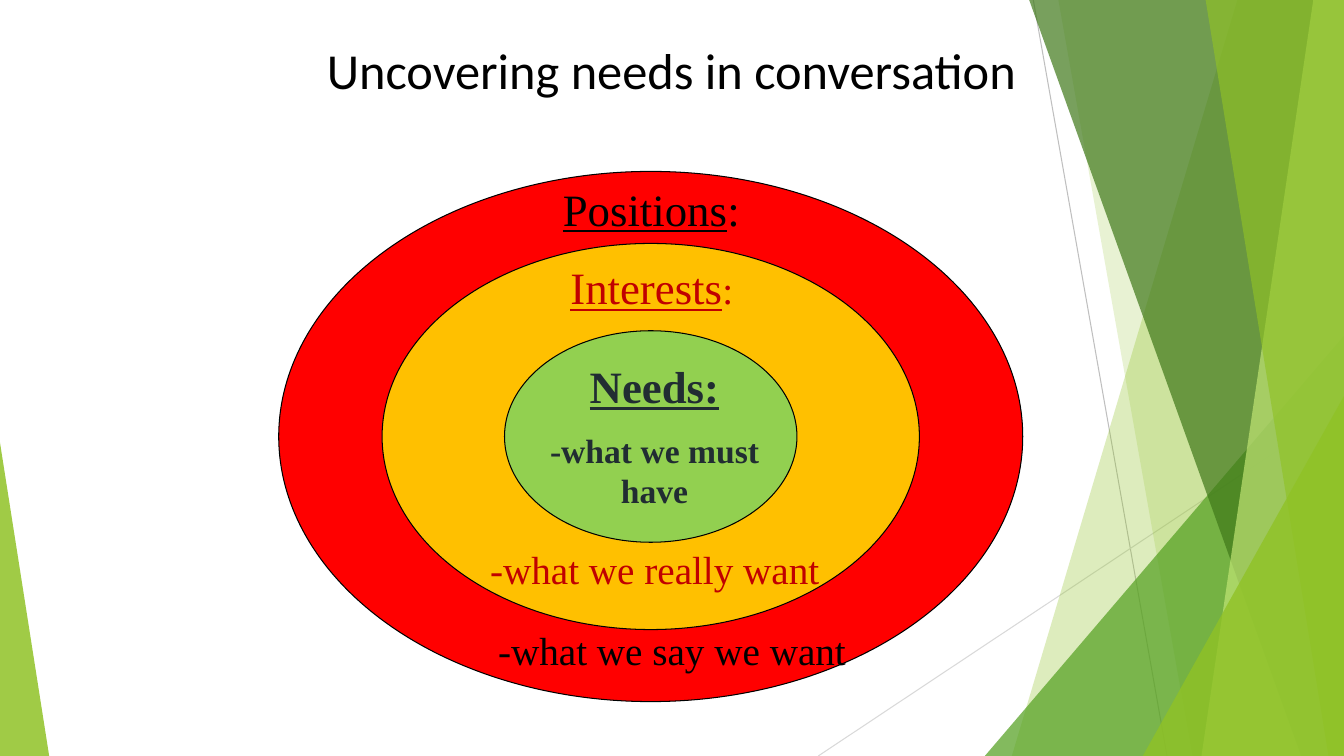
"""Build the slide on uncovering needs in conversation."""
from dataclasses import dataclass

from lxml import etree
from pptx import Presentation
from pptx import util as u
from pptx.dml.color import RGBColor
from pptx.enum import shapes, text
from pptx.oxml.ns import qn

COLORS = {
    "leaf": "90C226", "grass": "54A021", "forest": "3F7819", "lime": "C0E474",
    "gray": "BFBFBF", "silver": "D9D9D9", "black": "000000", "red": "FF0000",
    "amber": "FFC000", "green": "92D050", "crimson": "C00000", "slate": "212D32",
}
WIDTH, HEIGHT = 33.87, 19.05
TOP = -0.02
CENTER_X, CENTER_Y = 16.4, 11.0
SERIF = "Times New Roman"


@dataclass
class Ray:
    start: tuple[float, float]
    end: tuple[float, float]
    color: str


@dataclass
class Band:
    top_x: float
    bottom_x: float
    color: str
    alpha: int


@dataclass
class Wedge:
    left: float
    top: float
    width: float
    apex: float
    color: str
    alpha: int


@dataclass
class Ring:
    width: float
    height: float
    color: str


@dataclass
class Run:
    text: str
    size: int
    underline: bool = False


@dataclass
class Label:
    box: tuple[float, float, float, float]
    color: str
    paragraphs: list[list[Run]]
    font: str = SERIF
    bold: bool = False
    spacing: float = 1.0


RAYS = [
    Ray((26.04, 0), (29.41, HEIGHT), "gray"),
    Ray((WIDTH, 10.24), (20.62, HEIGHT), "silver"),
]
FACETS = [
    Band(31.19, 25.5, "leaf", 30),
    Band(26.67, 30.05, "leaf", 20),
    Wedge(24.82, 8.46, 9.05, 1, "grass", 72),
    Band(25.93, 32.79, "forest", 70),
    Band(33.1, 30.28, "lime", 70),
    Band(30.38, 33.48, "leaf", 65),
    Wedge(28.8, 9.98, 5.07, 1, "leaf", 80),
    Wedge(0, 11.15, 1.24, 0, "leaf", 85),
]
RINGS = [
    Ring(18.75, 13.36, "red"),
    Ring(13.54, 9.73, "amber"),
    Ring(7.37, 5.33, "green"),
]
LABELS = [
    Label((4.62, 1.04, 24.61, 1.98), "black",
          [[Run("Uncovering needs in conversation", 36)]], font="Calibri", spacing=0.9),
    Label((13.39, 4.45, 6.05, 1.63), "black", [[Run("Positions", 32, True), Run(":", 32)]]),
    Label((13.39, 6.43, 6.07, 1.63), "crimson", [[Run("Interests", 32, True), Run(":", 28)]]),
    Label((12.8, 8.92, 7.39, 4.19), "slate",
          [[Run("Needs:", 32, True)], [Run("-what we must have", 24)]], bold=True),
    Label((12.04, 13.61, 8.92, 1.45), "crimson", [[Run("-what we really want", 28)]]),
    Label((11.46, 15.65, 10.95, 1.45), "black", [[Run("-what we say we want", 28)]]),
]


def rgb(name: str) -> RGBColor:
    """Return the named colour."""
    return RGBColor.from_string(COLORS[name])


def fill(sp, color: str, alpha: int = 100) -> None:
    """Fill a shape, with an opacity in percent, and drop its shadow."""
    sp.shadow.inherit = False
    sp.fill.solid()
    sp.fill.fore_color.rgb = rgb(color)
    if alpha < 100:
        clr = sp._element.spPr.find(qn("a:solidFill"))[0]
        etree.SubElement(clr, qn("a:alpha"), val=str(alpha * 1000))


def draw_ray(s, ray: Ray) -> None:
    """Draw a thin background line."""
    points = [u.Cm(v) for v in (*ray.start, *ray.end)]
    sp = s.shapes.add_connector(shapes.MSO_CONNECTOR.STRAIGHT, *points)
    sp.line.color.rgb = rgb(ray.color)
    sp.line.width = u.Pt(0.75)
    etree.SubElement(sp._element.spPr, qn("a:effectLst"))


def draw_facet(s, facet: Band | Wedge) -> None:
    """Draw a translucent band or a wedge standing on the bottom edge."""
    if isinstance(facet, Band):
        corners = [(WIDTH, TOP), (WIDTH, HEIGHT), (facet.bottom_x, HEIGHT)]
        builder = s.shapes.build_freeform(u.Cm(facet.top_x), u.Cm(TOP))
        builder.add_line_segments([(u.Cm(x), u.Cm(y)) for x, y in corners])
        sp = builder.convert_to_shape()
    else:
        box = (facet.left, facet.top, facet.width, HEIGHT - facet.top)
        sp = s.shapes.add_shape(shapes.MSO_SHAPE.ISOSCELES_TRIANGLE, *map(u.Cm, box))
        sp.adjustments[0] = facet.apex
    fill(sp, facet.color, facet.alpha)
    sp.line.fill.background()


def draw_ring(s, ring: Ring) -> None:
    """Draw an ellipse around the common centre."""
    box = (CENTER_X - ring.width / 2, CENTER_Y - ring.height / 2, ring.width, ring.height)
    sp = s.shapes.add_shape(shapes.MSO_SHAPE.OVAL, *map(u.Cm, box))
    fill(sp, ring.color)
    sp.line.color.rgb = rgb("black")
    sp.line.width = u.Pt(0.75)


def draw_label(s, label: Label) -> None:
    """Draw a centred text box."""
    tf = s.shapes.add_textbox(*map(u.Cm, label.box)).text_frame
    tf.word_wrap = True
    for i, runs in enumerate(label.paragraphs):
        p = tf.add_paragraph() if i else tf.paragraphs[0]
        p.alignment = text.PP_ALIGN.CENTER
        p.line_spacing = label.spacing
        if i:
            p.space_before = u.Pt(runs[0].size / 2)
        for run in runs:
            r = p.add_run()
            r.text = run.text
            formats = {"name": label.font, "size": u.Pt(run.size),
                       "bold": label.bold, "underline": run.underline}
            for key, value in formats.items():
                setattr(r.font, key, value)
            r.font.color.rgb = rgb(label.color)


def main() -> None:
    """Build and save the slide."""
    prs = Presentation()
    prs.slide_width, prs.slide_height = u.Cm(WIDTH), u.Cm(HEIGHT)
    s = prs.slides.add_slide(prs.slide_layouts[6])
    for draw, items in ((draw_ray, RAYS), (draw_facet, FACETS),
                        (draw_ring, RINGS), (draw_label, LABELS)):
        for item in items:
            draw(s, item)
    prs.save("out.pptx")


if __name__ == "__main__":
    main()
